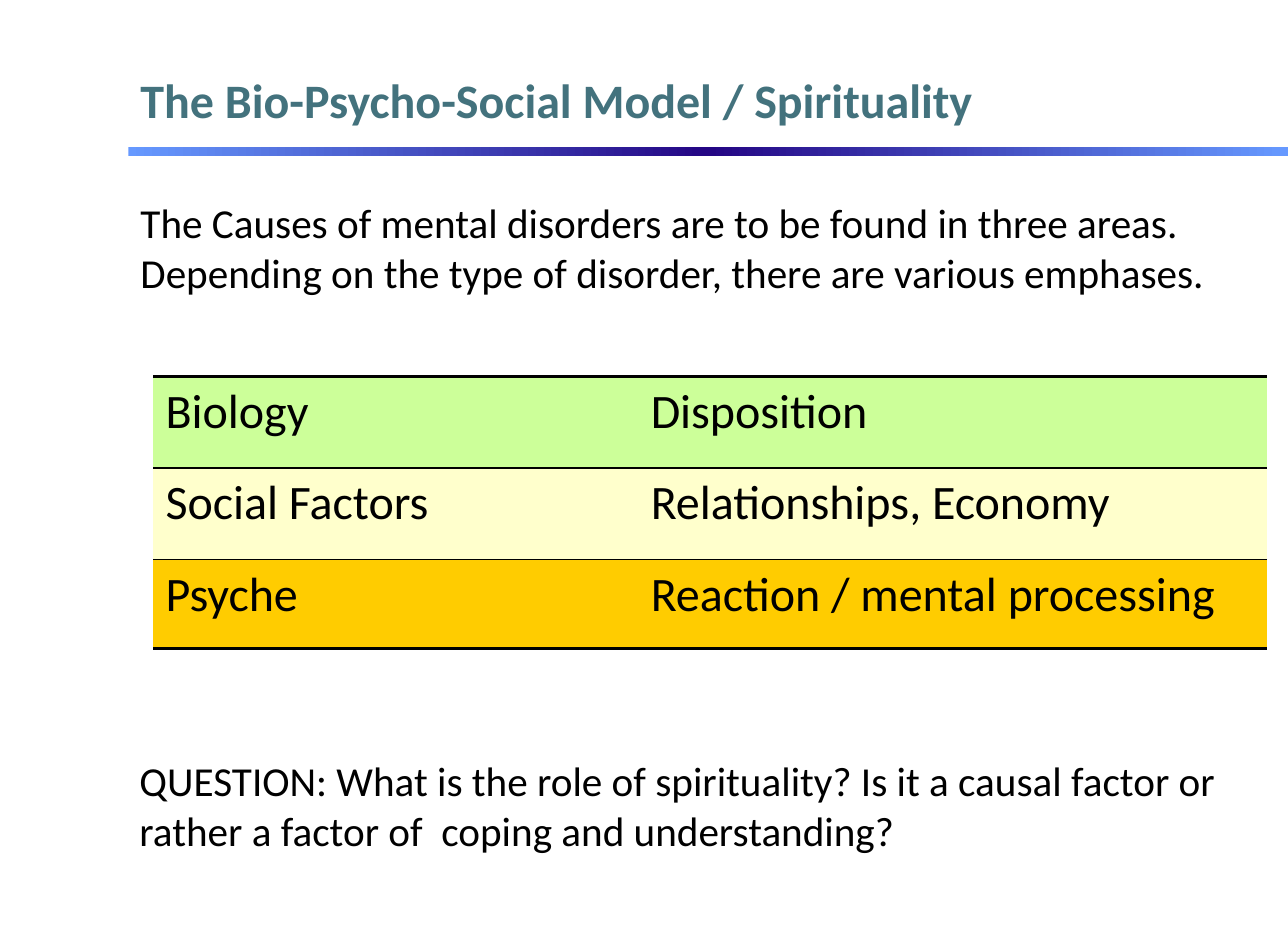
from lxml import etree
from pptx import Presentation
from pptx.dml.color import RGBColor
from pptx.enum.shapes import MSO_SHAPE
from pptx.enum.text import MSO_ANCHOR
from pptx.oxml import parse_xml
from pptx.oxml.ns import qn
from pptx.util import Cm, Pt

RECT = MSO_SHAPE.RECTANGLE
MIDDLE = MSO_ANCHOR.MIDDLE
NS = "http://schemas.openxmlformats.org/drawingml/2006/main"
BLACK = "000000"


def write(frame, text, size, color=BLACK, bold=False):
    """Put one styled paragraph into a text frame."""
    para = frame.paragraphs[0]
    para.text = text
    font = para.font
    font.name, font.size, font.bold = "Calibri", Pt(size), bold
    font.color.rgb = RGBColor.from_string(color)


def rule(cell, side, width):
    """Draw one cell border; a width of 0 hides it."""
    line = etree.SubElement(cell._tc.get_or_add_tcPr(), qn(f"a:ln{side}"), w=str(Pt(width)))
    if width:
        fill = etree.SubElement(line, qn("a:solidFill"))
        etree.SubElement(fill, qn("a:srgbClr"), val=BLACK)
    else:
        etree.SubElement(line, qn("a:noFill"))


deck = Presentation()
deck.slide_width, deck.slide_height = Cm(26.49), Cm(19.05)
slide = deck.slides.add_slide(deck.slide_layouts[6])
shapes = slide.shapes

# Bar under the title, light at both ends
bar = shapes.add_shape(RECT, Cm(2.64), Cm(3.02), Cm(23.85), Cm(0.2))
bar.shadow.inherit = False
bar.line.fill.background()
bar.fill.gradient()
bar.fill.gradient_angle = 0
stops = bar._element.spPr.find(qn("a:gradFill")).find(qn("a:gsLst"))
for stop in list(stops):
    stops.remove(stop)
for place, color in [(0, "6699FF"), (50, "240684"), (100, "6699FF")]:
    stops.append(parse_xml(
        f'<a:gs xmlns:a="{NS}" pos="{place * 1000}"><a:srgbClr val="{color}"/></a:gs>'))

# Title and the two paragraphs
title = shapes.add_textbox(Cm(2.64), Cm(1.12), Cm(22.91), Cm(1.83)).text_frame
title.word_wrap = True
title.vertical_anchor = MIDDLE
write(title, "The Bio-Psycho-Social Model / Spirituality", 28, "43727D", True)

notes = [
    (2.64, 3.94, "The Causes of mental disorders are to be found in three areas. "
                 "Depending on the type of disorder, there are various emphases."),
    (2.62, 15.42, "QUESTION: What is the role of spirituality? Is it a causal factor or "
                  "rather a factor of  coping and understanding?"),
]
for left, top, text in notes:
    frame = shapes.add_textbox(Cm(left), Cm(top), Cm(23.11), Cm(2.31)).text_frame
    frame.word_wrap = True
    write(frame, text, 24)

# Table of the three areas
areas = [
    ("Biology", "Disposition", "CCFF99", 1.88),
    ("Social Factors", "Relationships, Economy", "FFFFCC", 1.88),
    ("Psyche", "Reaction / mental processing", "FFCC00", 1.83),
]
widths = [8.51, 1.47, 12.93]
edges = [2.25, 1, 1, 2.25]
table = shapes.add_table(len(areas), len(widths), Cm(3.15), Cm(7.75),
                         Cm(sum(widths)), Cm(5.59)).table
table.first_row = table.horz_banding = False
for column, width in zip(table.columns, widths):
    column.width = Cm(width)
for i, (area, factor, color, height) in enumerate(areas):
    table.rows[i].height = Cm(height)
    for cell, text in zip(table.rows[i].cells, (area, "", factor)):
        for side, width in zip("LRTB", (0, 0, edges[i], edges[i + 1])):
            rule(cell, side, width)
        cell.fill.solid()
        cell.fill.fore_color.rgb = RGBColor.from_string(color)
        if text:
            write(cell.text_frame, text, 28)

deck.save("out.pptx")
